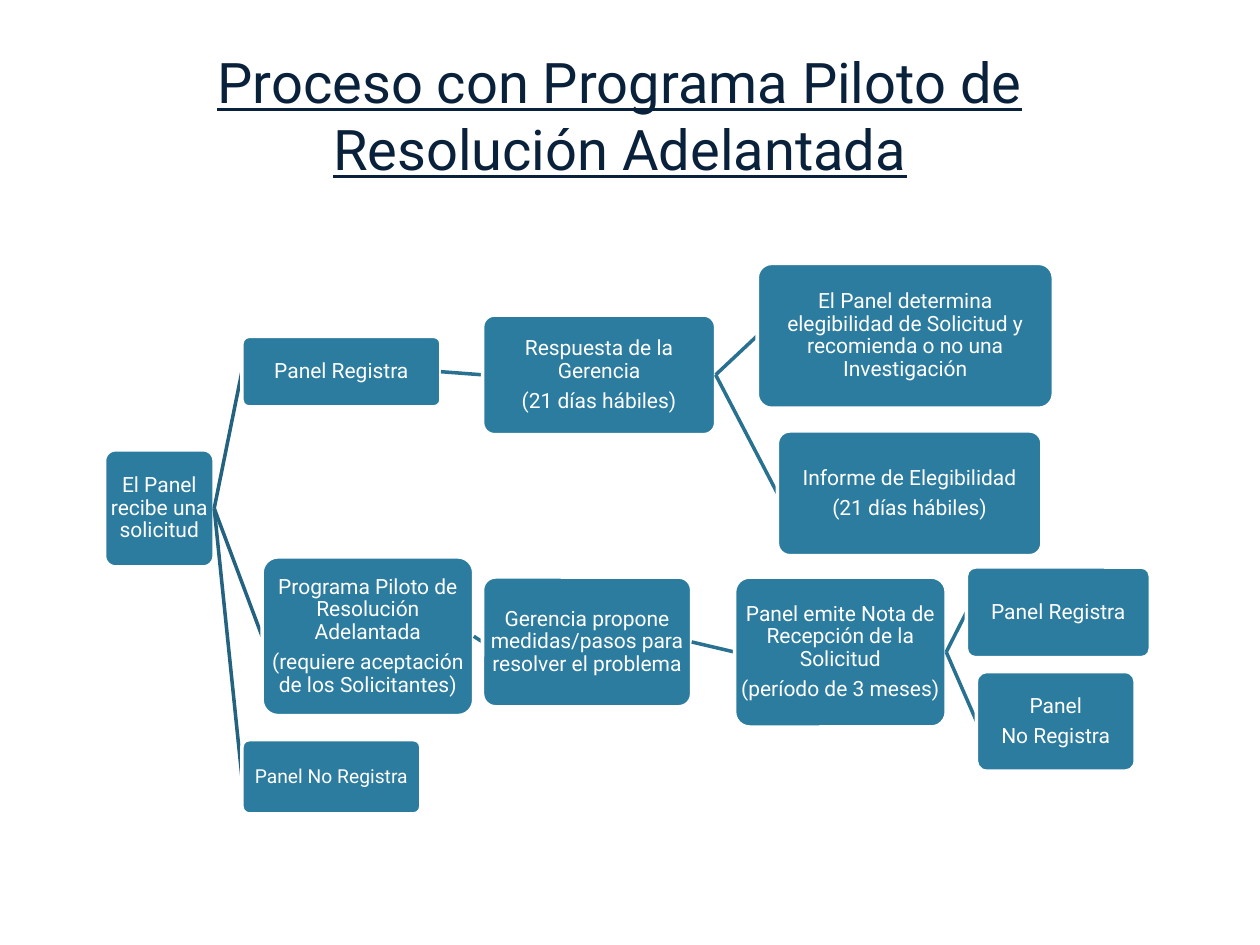
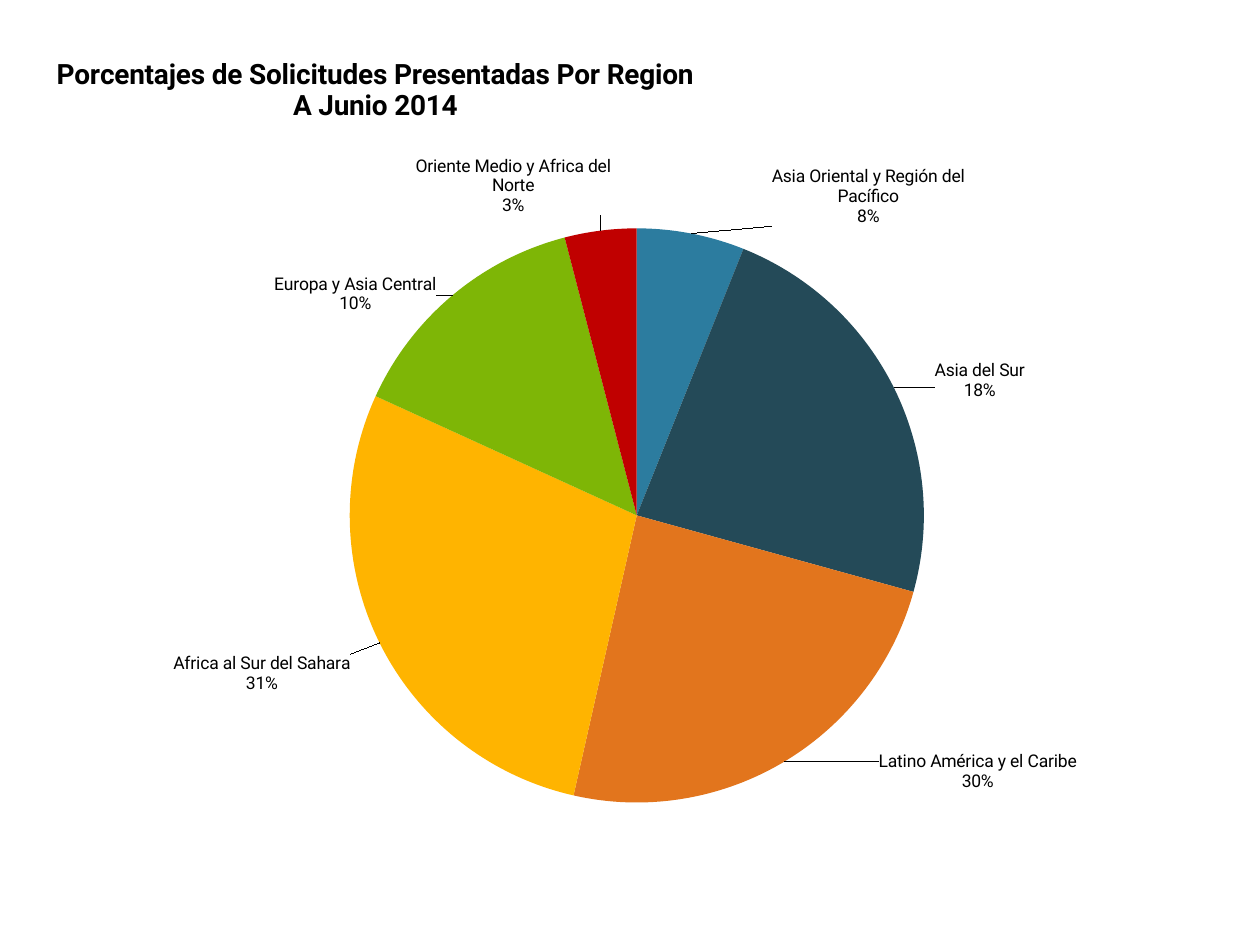
import pptx
import pptx.chart.data
import pptx.dml.color
import pptx.enum.chart
import pptx.enum.shapes
import pptx.enum.text
import pptx.oxml
import pptx.oxml.ns
import pptx.util
from lxml import etree

Inches = pptx.util.Inches
Pt = pptx.util.Pt
FACE = "Roboto"
WHITE, BLACK, NAVY = "FFFFFF", "000000", "09213B"
BLUE, DARK, MID = "2C7C9F", "23637F", "287190"

NODES = {
    "root": (None, 0, 1.48, 0.87, 0.93, 12, ["El Panel recibe una solicitud"]),
    "drop": ("root", 1.09, 3.78, 1.42, 0.59, 11, ["Panel No Registra"]),
    "enter": ("root", 1.09, 0.58, 1.58, 0.56, 12, ["Panel Registra"]),
    "reply": ("enter", 3, 0.41, 1.85, 0.95, 12,
              ["Respuesta de la Gerencia", "(21 días hábiles)"]),
    "judge": ("reply", 5.18, 0, 2.35, 1.15, 12,
              ["El Panel determina elegibilidad de Solicitud y recomienda o no una Investigación"]),
    "report": ("reply", 5.34, 1.33, 2.1, 0.99, 12,
               ["Informe de Elegibilidad", "(21 días hábiles)"]),
    "pilot": ("root", 1.25, 2.33, 1.68, 1.26, 12,
              ["Programa Piloto de Resolución Adelantada",
               "(requiere aceptación de los Solicitantes)"]),
    "offer": ("pilot", 3, 2.49, 1.66, 1.03, 12,
              ["Gerencia propone medidas/pasos para resolver el problema"]),
    "note": ("offer", 5, 2.49, 1.68, 1.19, 12,
             ["Panel emite Nota de Recepción de la Solicitud", "(período de 3 meses)"]),
    "yes": ("note", 6.84, 2.41, 1.46, 0.72, 12, ["Panel Registra"]),
    "no": ("note", 6.92, 3.24, 1.26, 0.79, 12, ["Panel", "No Registra"]),
}

PARTS = [
    ("Asia Oriental y Región del Pacífico", "8%", 6, "2C7C9F", 0.07, 0),
    ("Asia del Sur", "18%", 23, "244A58", 0.03, 0.02),
    ("Latino América y el Caribe", "30%", 24, "E2751D", 0.08, -0.02),
    ("Africa al Sur del Sahara", "31%", 28, "FFB400", -0.02, 0.01),
    ("Europa y Asia Central", "10%", 14, "7EB606", -0.01, 0.03),
    ("Oriente Medio y Africa del Norte", "3%", 4, "C00000", 0.01, -0.01),
]


def hue(code):
    return pptx.dml.color.RGBColor.from_string(code)


def apply(item, vals):
    for key, val in vals.items():
        setattr(item, key, val)


def style(font, size, code, **more):
    apply(font, {"name": FACE, "size": Pt(size), **more})
    font.color.rgb = hue(code)


def write(frame, lines, size, code, vals, **more):
    frame.text = "\n".join(lines)
    for para in frame.paragraphs:
        apply(para, vals)
        for run in para.runs:
            style(run.font, size, code, **more)


def title(slide, x, y, w, h, text):
    box = slide.shapes.add_textbox(Inches(x), Inches(y), Inches(w), Inches(h))
    box.text_frame.word_wrap = True
    write(box.text_frame, [text], 32, NAVY,
          {"alignment": pptx.enum.text.PP_ALIGN.CENTER}, underline=True)


def link(slide, start, end, code):
    line = slide.shapes.add_connector(
        pptx.enum.shapes.MSO_CONNECTOR.STRAIGHT, *map(Inches, (*start, *end)))
    line.line.color.rgb = hue(code)
    line.line.width = Pt(2)
    etree.SubElement(line._element.spPr, pptx.oxml.ns.qn("a:effectLst"))


def card(slide, x, y, w, h, size, lines):
    box = slide.shapes.add_shape(
        pptx.enum.shapes.MSO_SHAPE.ROUNDED_RECTANGLE, *map(Inches, (x, y, w, h)))
    box.adjustments[0] = 0.1
    box.shadow.inherit = False
    box.fill.solid()
    box.fill.fore_color.rgb = hue(BLUE)
    box.line.color.rgb = hue(WHITE)
    box.line.width = Pt(2)
    inset = Inches(0.01)
    apply(box.text_frame, {
        "word_wrap": True, "vertical_anchor": pptx.enum.text.MSO_ANCHOR.MIDDLE,
        "margin_left": inset, "margin_right": inset,
        "margin_top": inset, "margin_bottom": inset})
    write(box.text_frame, lines, size, WHITE, {
        "alignment": pptx.enum.text.PP_ALIGN.CENTER,
        "line_spacing": 0.9, "space_after": Pt(0.35 * size)})


def flow(slide, left, top):
    for head, x, y, w, h, size, lines in NODES.values():
        if head:
            _, hx, hy, hw, hh, _, _ = NODES[head]
            link(slide, (left + hx + hw, top + hy + hh / 2), (left + x, top + y + h / 2),
                 DARK if head == "root" else MID)
        card(slide, left + x, top + y, w, h, size, lines)


def place(node, index, edge, **spots):
    for old in node.findall(pptx.oxml.ns.qn("c:layout")):
        node.remove(old)
    tags = ['<c:layoutTarget val="inner"/>'] if "w" in spots else []
    if edge:
        tags += ['<c:xMode val="edge"/>', '<c:yMode val="edge"/>']
    tags += [f'<c:{key} val="{val}"/>' for key, val in spots.items()]
    node.insert(index, pptx.oxml.parse_xml(
        f'<c:layout {pptx.oxml.ns.nsdecls("c")}><c:manualLayout>'
        f'{"".join(tags)}</c:manualLayout></c:layout>'))


def pie(slide, x, y, w, h):
    data = pptx.chart.data.CategoryChartData()
    data.categories = [part[0] for part in PARTS]
    data.add_series("Solicitudes", [part[2] for part in PARTS])
    chart = slide.shapes.add_chart(
        pptx.enum.chart.XL_CHART_TYPE.PIE, *map(Inches, (x, y, w, h)), data).chart
    chart.has_legend = False
    style(chart.font, 10, BLACK)
    chart.has_title = True
    write(chart.chart_title.text_frame,
          ["Porcentajes de Solicitudes Presentadas Por Region", "A Junio 2014"],
          16, BLACK, {}, bold=True)
    series = chart.plots[0].series[0]
    apply(series.data_labels, {
        "show_percentage": True, "show_category_name": True, "show_value": False})
    for i, (name, share, _, code, _, _) in enumerate(PARTS):
        point = series.points[i]
        point.format.fill.solid()
        point.format.fill.fore_color.rgb = hue(code)
        point.format.line.fill.background()
        write(point.data_label.text_frame, [name, share], 10, BLACK, {})
        point.data_label.position = pptx.enum.chart.XL_LABEL_POSITION.OUTSIDE_END
    root = chart.element
    for node, part in zip(root.xpath(".//c:dLbl"), PARTS):
        place(node, 1, False, x=part[4], y=part[5])
    place(root.xpath(".//c:chart/c:title")[0], 1, True, x=0.01, y=0)
    place(root.xpath(".//c:plotArea")[0], 0, True, x=0.27, y=0.22, w=0.51, h=0.72)


def main():
    deck = pptx.Presentation()
    apply(deck, {"slide_width": Inches(10), "slide_height": Inches(7.5)})
    first, second = (deck.slides.add_slide(deck.slide_layouts[6]) for _ in range(2))
    flow(first, 0.83, 2.09)
    title(first, 0.92, 0.33, 8, 1.48, "Proceso con Programa Piloto de Resolución Adelantada")
    pie(second, 0.33, 0.42, 9, 6.33)
    deck.save("out.pptx")


if __name__ == "__main__":
    main()
